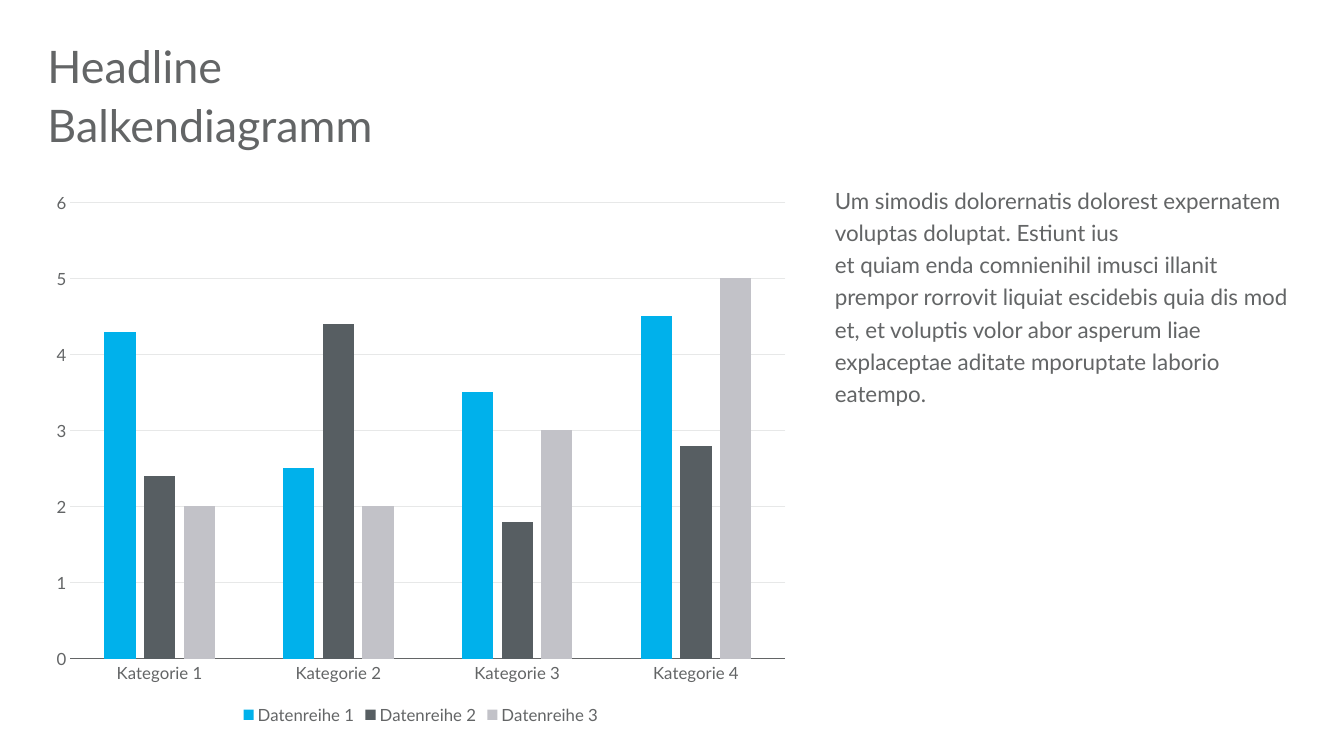
import pptx
import pptx.chart.data
import pptx.dml.color
import pptx.enum.chart
import pptx.util
from pptx.util import Inches, Pt

RGBColor = pptx.dml.color.RGBColor
GREY = RGBColor(0x63, 0x65, 0x66)
GRID = RGBColor(0xE7, 0xE8, 0xE8)
BLUE = RGBColor(0x00, 0xB1, 0xEB)
SLATE = RGBColor(0x57, 0x5E, 0x62)
SILVER = RGBColor(0xC2, 0xC2, 0xC8)
FONT = "Lato"

# Content: text, (left, top, width, height), size, line spacing
# \v is a line break within the paragraph
TEXTS = [
    ("Headline", (0.47, 0.44, 12.39, 0.51), 32, 0.9),
    ("Balkendiagramm", (0.47, 0.97, 12.39, 0.51), 32, 1.0),
    ("Um simodis dolorernatis dolorest expernatem voluptas doluptat. Estiunt ius\v"
     "et quiam enda comnienihil imusci illanit prempor rorrovit liquiat escidebis "
     "quia dis mod et, et voluptis volor abor asperum liae explaceptae aditate "
     "mporuptate laborio eatempo.", (8.28, 1.8, 4.58, 3), 16, 1.2),
]
CHART_AREA = (0.41, 1.8, 7.53, 5.43)
CATEGORIES = ["Kategorie 1", "Kategorie 2", "Kategorie 3", "Kategorie 4"]
SERIES = [
    ("Datenreihe 1", (4.3, 2.5, 3.5, 4.5), BLUE),
    ("Datenreihe 2", (2.4, 4.4, 1.8, 2.8), SLATE),
    ("Datenreihe 3", (2, 2, 3, 5), SILVER),
]


def style_font(font, size):
    font.name = FONT
    font.size = Pt(size)
    font.color.rgb = GREY


def style_line(line, color):
    line.color.rgb = color
    line.width = Pt(0.75)


def add_text(page, text, area, size, spacing):
    frame = page.shapes.add_textbox(*map(Inches, area)).text_frame
    frame.word_wrap = True
    frame.margin_left = frame.margin_right = 0
    frame.margin_top = frame.margin_bottom = 0
    frame.text = text
    para = frame.paragraphs[0]
    para.line_spacing = spacing
    for span in para.runs:
        style_font(span.font, size)


def add_column_chart(page):
    data = pptx.chart.data.CategoryChartData()
    data.categories = CATEGORIES
    for name, values, _ in SERIES:
        data.add_series(name, values)
    chart = page.shapes.add_chart(
        pptx.enum.chart.XL_CHART_TYPE.COLUMN_CLUSTERED,
        *map(Inches, CHART_AREA), data).chart
    chart.has_title = False
    style_font(chart.font, 10)

    # Columns
    plot = chart.plots[0]
    plot.vary_by_categories = False
    plot.gap_width = 219
    plot.overlap = -27
    for series, (_, _, color) in zip(plot.series, SERIES):
        series.format.fill.solid()
        series.format.fill.fore_color.rgb = color

    # Axes
    for axis in (chart.category_axis, chart.value_axis):
        axis.major_tick_mark = pptx.enum.chart.XL_TICK_MARK.NONE
        axis.minor_tick_mark = pptx.enum.chart.XL_TICK_MARK.NONE
        style_font(axis.tick_labels.font, 12)
    style_line(chart.category_axis.format.line, GREY)
    chart.value_axis.format.line.fill.background()
    chart.value_axis.minimum_scale = 0
    chart.value_axis.maximum_scale = 6
    chart.value_axis.major_unit = 1
    style_line(chart.value_axis.major_gridlines.format.line, GRID)

    # Legend
    chart.has_legend = True
    chart.legend.position = pptx.enum.chart.XL_LEGEND_POSITION.BOTTOM
    chart.legend.include_in_layout = False
    style_font(chart.legend.font, 12)


def main():
    deck = pptx.Presentation()
    deck.slide_width = Inches(13.33)
    deck.slide_height = Inches(7.5)
    page = deck.slides.add_slide(deck.slide_layouts[6])
    for entry in TEXTS:
        add_text(page, *entry)
    add_column_chart(page)
    deck.save("out.pptx")


if __name__ == "__main__":
    main()
